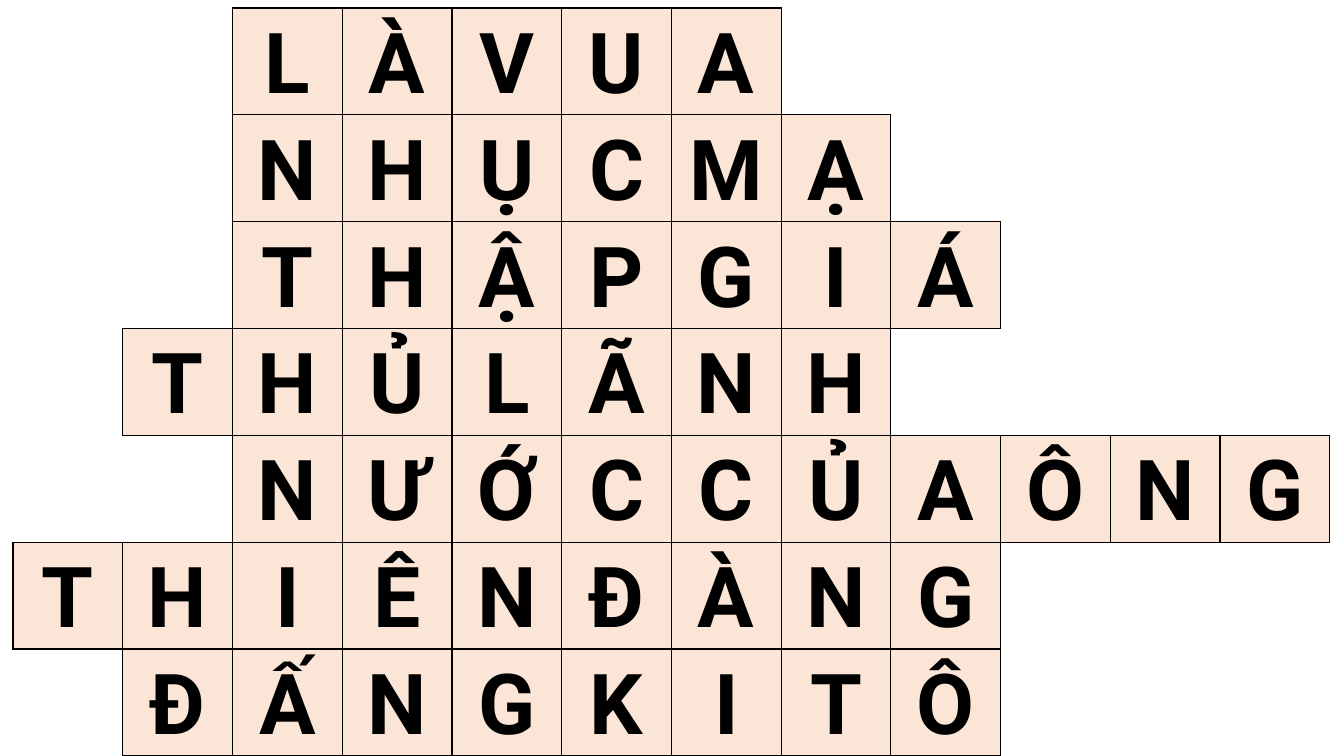
import pptx
import pptx.dml.color
import pptx.enum.text
import pptx.oxml
import pptx.oxml.ns
import pptx.util
from pptx.util import Cm

HUES = {"ink": "000000", "tile": "FBE5D6", "blank": "FFFFFF"}
WORDS = [
    (2, "LÀVUA"),
    (2, "NHỤCMẠ"),
    (2, "THẬPGIÁ"),
    (1, "THỦLÃNH"),
    (2, "NƯỚCCỦAÔNG"),
    (0, "THIÊNĐÀNG"),
    (1, "ĐẤNGKITÔ"),
]
COLS = 12
SIDES = {"lnL": (0, -1), "lnR": (0, 1), "lnT": (-1, 0), "lnB": (1, 0)}
PLAIN = {"first_row": False, "horz_banding": False}
INSET = {
    "margin_left": Cm(0.18),
    "margin_right": Cm(0.18),
    "margin_top": 0,
    "margin_bottom": 0,
    "vertical_anchor": pptx.enum.text.MSO_ANCHOR.MIDDLE,
}
LINE = {"alignment": pptx.enum.text.PP_ALIGN.CENTER, "line_spacing": 1.07}
FONT = {"name": "Roboto", "size": pptx.util.Pt(60), "bold": True}


def apply(item, values):
    """Set each named value on the item."""
    for name, value in values.items():
        setattr(item, name, value)


def hue(name):
    """Return the named colour."""
    return pptx.dml.color.RGBColor.from_string(HUES[name])


def edge(cell, side, shown):
    """Rule one side of a cell, or leave it clear."""
    ink = f'<a:solidFill><a:srgbClr val="{HUES["ink"]}"/></a:solidFill>'
    paint = ink if shown else "<a:noFill/>"
    space = pptx.oxml.ns.nsdecls("a")
    width = pptx.util.Pt(1)
    rule = pptx.oxml.parse_xml(f'<a:{side} {space} w="{width}">{paint}</a:{side}>')
    cell._tc.get_or_add_tcPr().append(rule)


def letter(cell, text):
    """Write one centred letter in a cell."""
    line = cell.text_frame.paragraphs[0]
    apply(line, LINE)
    run = line.add_run()
    run.text = text
    apply(run.font, FONT)
    run.font.color.rgb = hue("ink")


def puzzle(slide, left, top, width, height):
    """Fill the given box with the crossword grid."""
    tiles = {
        (row, start + step): text
        for row, (start, word) in enumerate(WORDS)
        for step, text in enumerate(word)
    }
    grid = slide.shapes.add_table(len(WORDS), COLS, left, top, width, height).table
    apply(grid, PLAIN)
    for row in range(len(WORDS)):
        for col in range(COLS):
            cell = grid.cell(row, col)
            apply(cell, INSET)
            filled = (row, col) in tiles
            for side, (down, over) in SIDES.items():
                edge(cell, side, filled or (row + down, col + over) in tiles)
            cell.fill.solid()
            cell.fill.fore_color.rgb = hue("tile" if filled else "blank")
            if filled:
                letter(cell, tiles[row, col])


def main():
    """Build and save the deck."""
    deck = pptx.Presentation()
    apply(deck, {"slide_width": Cm(33.87), "slide_height": Cm(19.05)})
    slide = deck.slides.add_slide(deck.slide_layouts[6])
    puzzle(slide, Cm(0.33), Cm(0.2), Cm(33.18), Cm(18.85))
    deck.save("out.pptx")


if __name__ == "__main__":
    main()
